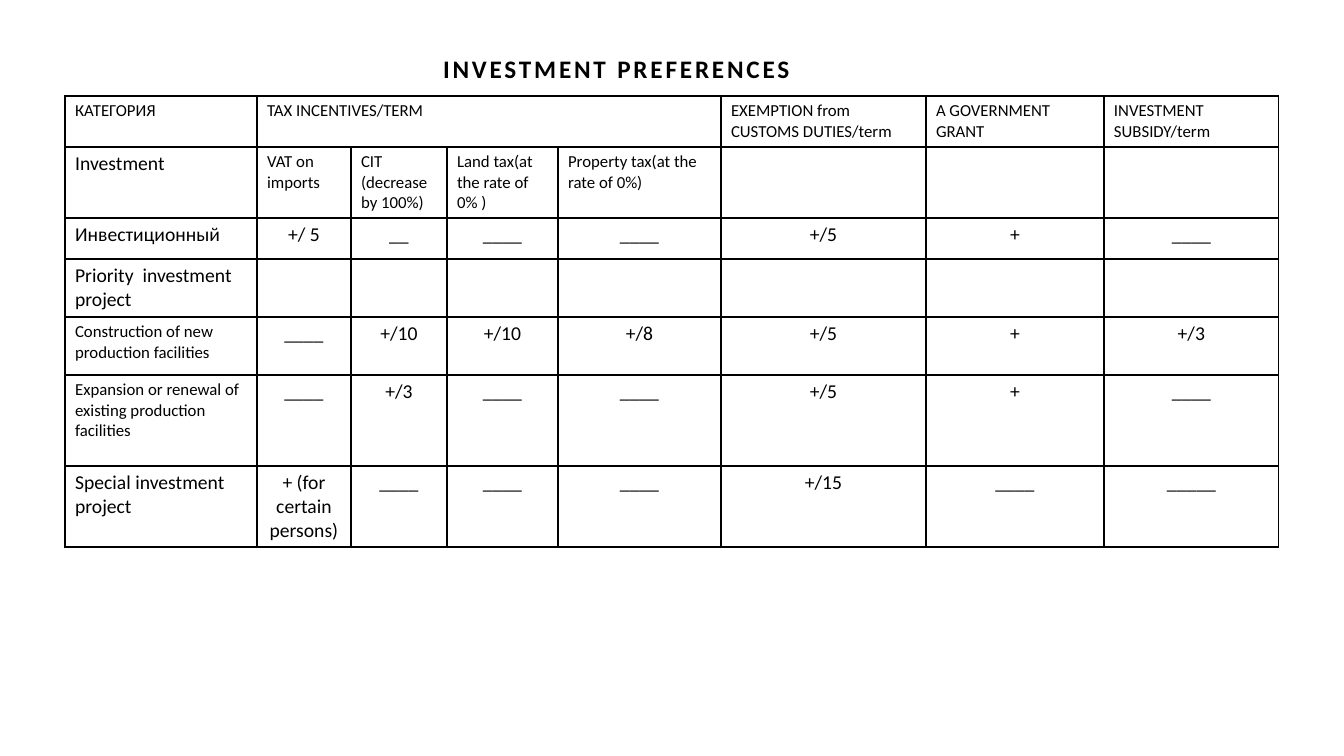
from lxml.etree import SubElement
from pptx import Presentation
from pptx.dml.color import RGBColor
from pptx.enum.text import MSO_ANCHOR, MSO_AUTO_SIZE, PP_ALIGN
from pptx.oxml.ns import qn
from pptx.util import Pt

TITLE = "INVESTMENT PREFERENCES"
ROWS = [
    ["КАТЕГОРИЯ", "TAX INCENTIVES/TERM", "", "", "",
     "EXEMPTION from CUSTOMS DUTIES/term", "A GOVERNMENT GRANT", "INVESTMENT SUBSIDY/term"],
    ["Investment", "VAT on imports", "CIT (decrease by 100%)", "Land tax(at the rate of 0% )",
     "Property tax(at the rate of 0%)", "", "", ""],
    ["Инвестиционный", "+/ 5", "__", "____", "____", "+/5", "+", "____"],
    ["Priority  investment project", "", "", "", "", "", "", ""],
    ["Construction of new production facilities",
     "____", "+/10", "+/10", "+/8", "+/5", "+", "+/3"],
    ["Expansion or renewal of existing production facilities",
     "____", "+/3", "____", "____", "+/5", "+", "____"],
    ["Special investment project",
     "+ (for certain persons)", "____", "____", "____", "+/15", "____", "_____"],
]
COLUMN_WIDTHS = [192, 94, 96, 111, 163, 205, 178, 175]
ROW_HEIGHTS = [51, 71, 41, 58, 58, 91, 81]
HEADER_ROWS = 2
LARGE_LABEL_ROWS = {1, 2, 3, 6}

BLACK = RGBColor(0, 0, 0)
WHITE = RGBColor(255, 255, 255)
FONT = "Calibri"


def px(length):
    return round(length * 914400 / 100.8)


def add_text(paragraph, text, size, bold=False):
    run = paragraph.add_run()
    run.text = text
    run.font.name = FONT
    run.font.size = Pt(size)
    run.font.bold = bold
    run.font.color.rgb = BLACK
    return run


def add_borders(cell):
    properties = cell._tc.get_or_add_tcPr()
    for index, side in enumerate(("lnL", "lnR", "lnT", "lnB")):
        line = SubElement(properties, qn(f"a:{side}"), w=str(Pt(1)))
        fill = SubElement(line, qn("a:solidFill"))
        SubElement(fill, qn("a:srgbClr"), val=str(BLACK))
        properties.insert(index, line)


def add_title(slide):
    title = slide.shapes.title
    title.left, title.top, title.width, title.height = map(px, (433, 48, 373, 40))
    frame = title.text_frame
    frame.word_wrap = False
    frame.auto_size = MSO_AUTO_SIZE.SHAPE_TO_FIT_TEXT
    frame.vertical_anchor = MSO_ANCHOR.TOP
    paragraph = frame.paragraphs[0]
    paragraph.alignment = PP_ALIGN.LEFT
    run = add_text(paragraph, TITLE, 18, True)
    run.font._element.set("spc", "200")


def add_preferences_table(slide):
    table = slide.shapes.add_table(
        len(ROWS), len(COLUMN_WIDTHS), px(65), px(96),
        px(sum(COLUMN_WIDTHS)), px(sum(ROW_HEIGHTS))).table
    table.first_row = False
    table.horz_banding = False
    for column, width in zip(table.columns, COLUMN_WIDTHS):
        column.width = px(width)
    for row, height in zip(table.rows, ROW_HEIGHTS):
        row.height = px(height)
    table.cell(0, 1).merge(table.cell(0, 4))
    for row_index, texts in enumerate(ROWS):
        for column_index, text in enumerate(texts):
            cell = table.cell(row_index, column_index)
            cell.fill.solid()
            cell.fill.fore_color.rgb = WHITE
            add_borders(cell)
            if not text:
                continue
            is_label = column_index == 0
            is_value = row_index >= HEADER_ROWS and not is_label
            large = is_value or (is_label and row_index in LARGE_LABEL_ROWS)
            paragraph = cell.text_frame.paragraphs[0]
            paragraph.alignment = PP_ALIGN.CENTER if is_value else PP_ALIGN.LEFT
            add_text(paragraph, text, 14 if large else 12)


def main():
    presentation = Presentation()
    presentation.slide_width = px(1344)
    presentation.slide_height = px(756)
    slide = presentation.slides.add_slide(presentation.slide_layouts[5])
    add_preferences_table(slide)
    add_title(slide)
    presentation.save("out.pptx")


if __name__ == "__main__":
    main()
